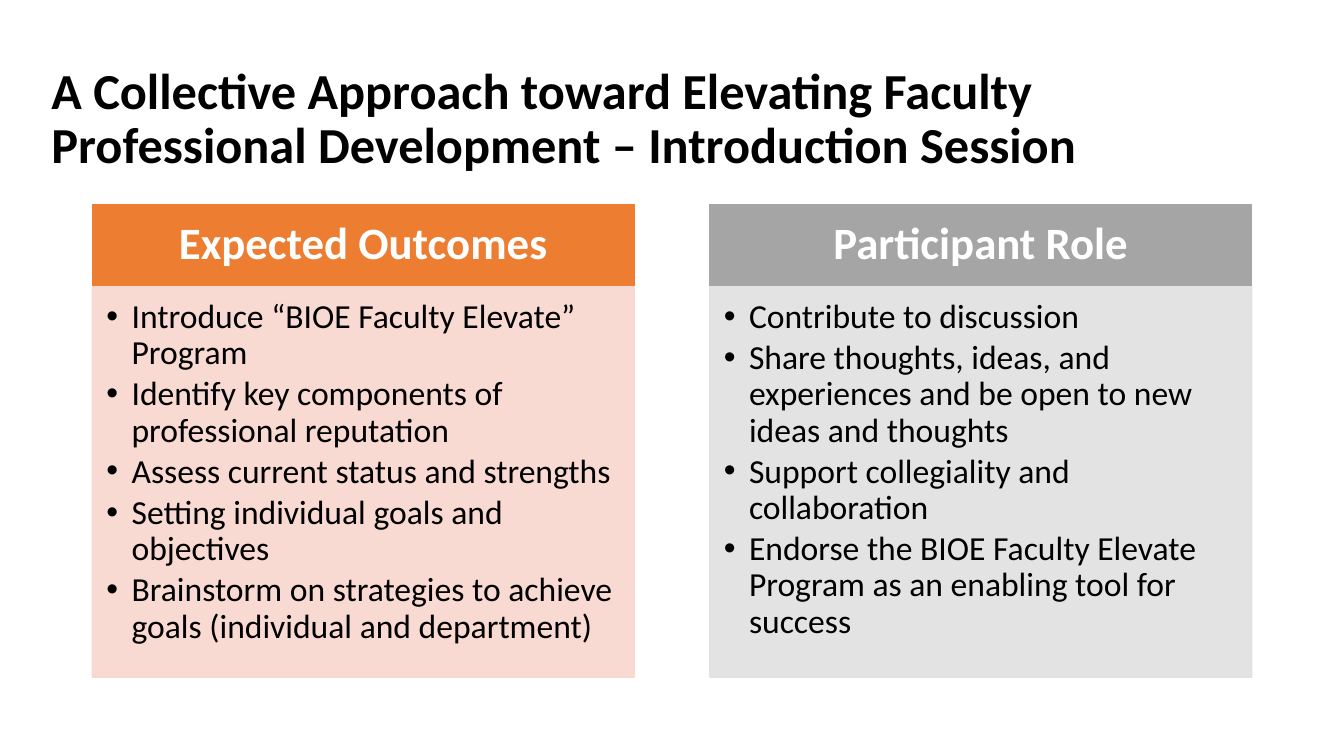
import pptx
import pptx.dml.color
import pptx.enum.shapes
import pptx.enum.text
import pptx.oxml
import pptx.oxml.ns
import pptx.util

Pt = pptx.util.Pt
ALIGN = pptx.enum.text.PP_ALIGN
ANCHOR = pptx.enum.text.MSO_ANCHOR


def paint(shape, color, opacity=100):
    shape.fill.solid()
    shape.line.fill.solid()
    shape.line.width = Pt(1)
    for fill in (shape.fill, shape.line.fill):
        fill.fore_color.rgb = pptx.dml.color.RGBColor.from_string(color)
    if opacity < 100:
        for element in shape._element.spPr.iter(pptx.oxml.ns.qn("a:srgbClr")):
            element.append(pptx.oxml.parse_xml(
                f'<a:alpha {pptx.oxml.ns.nsdecls("a")} val="{opacity * 1000}"/>'))


def write(shape, lines, frame_format, paragraph_format, font_format, color, bullets=False):
    frame = shape.text_frame
    frame.text = "\n".join(lines)
    common = {"word_wrap": True, "auto_size": pptx.enum.text.MSO_AUTO_SIZE.NONE}
    for name, value in {**common, **frame_format}.items():
        setattr(frame, name, value)
    for paragraph in frame.paragraphs:
        if bullets:
            properties = paragraph._p.get_or_add_pPr()
            properties.set("marL", str(Pt(18)))
            properties.set("indent", str(-Pt(18)))
            properties.append(pptx.oxml.parse_xml(
                f'<a:buChar {pptx.oxml.ns.nsdecls("a")} char="•"/>'))
        spacing = {"line_spacing": 0.9, "space_before": Pt(0)}
        for name, value in {**spacing, **paragraph_format}.items():
            setattr(paragraph, name, value)
        for run in paragraph.runs:
            for name, value in {"name": "Calibri", **font_format}.items():
                setattr(run.font, name, value)
            run.font.color.rgb = pptx.dml.color.RGBColor.from_string(color)


presentation = pptx.Presentation()
presentation.slide_width = Pt(960)
presentation.slide_height = Pt(540)
slide = presentation.slides.add_slide(presentation.slide_layouts.get_by_name("Two Content"))

# Title
title = slide.shapes.title
title.left, title.top, title.width, title.height = Pt(29.5), Pt(53.3), Pt(828), Pt(104.4)
write(title,
      ["A Collective Approach toward Elevating Faculty Professional Development – Introduction Session"],
      {"vertical_anchor": ANCHOR.MIDDLE, "margin_top": Pt(0), "margin_bottom": Pt(39.6)},
      {"alignment": ALIGN.LEFT}, {"size": Pt(36), "bold": True}, "000000")

# Two columns, each a heading bar above a bulleted panel
columns = [
    ("Expected Outcomes", "ED7D31", "F8D7CE", [
        "Introduce “BIOE Faculty Elevate” Program",
        "Identify key components of professional reputation",
        "Assess current status and strengths",
        "Setting individual goals and objectives",
        "Brainstorm on strategies to achieve goals (individual and department)",
    ]),
    ("Participant Role", "A5A5A5", "E1E1E1", [
        "Contribute to discussion",
        "Share thoughts, ideas, and experiences and be open to new ideas and thoughts",
        "Support collegiality and collaboration",
        "Endorse the BIOE Faculty Elevate Program as an enabling tool for success",
    ]),
]
first_left, column_step, column_width = 66, 441, 387
bar_top, bar_height, panel_height = 146.2, 57.6, 280

for index, (heading, bar_color, panel_color, items) in enumerate(columns):
    left = first_left + index * column_step

    # Heading bar
    bar = slide.shapes.add_shape(pptx.enum.shapes.MSO_SHAPE.RECTANGLE, Pt(left),
                                 Pt(bar_top), Pt(column_width), Pt(bar_height))
    bar.shadow.inherit = False
    paint(bar, bar_color)
    write(bar, [heading],
          {"vertical_anchor": ANCHOR.MIDDLE, "margin_left": Pt(18), "margin_right": Pt(18),
           "margin_top": Pt(10), "margin_bottom": Pt(10)},
          {"alignment": ALIGN.CENTER}, {"size": Pt(32), "bold": True}, "FFFFFF")

    # Bulleted panel
    panel = slide.placeholders[index + 1]
    panel.left, panel.top = Pt(left), Pt(bar_top + bar_height)
    panel.width, panel.height = Pt(column_width), Pt(panel_height)
    paint(panel, panel_color, opacity=90)
    write(panel, items,
          {"vertical_anchor": ANCHOR.TOP, "margin_left": Pt(10), "margin_right": Pt(14),
           "margin_top": Pt(10), "margin_bottom": Pt(15)},
          {"alignment": ALIGN.LEFT, "space_after": Pt(3.5)}, {"size": Pt(24)}, "000000",
          bullets=True)

presentation.save("out.pptx")
